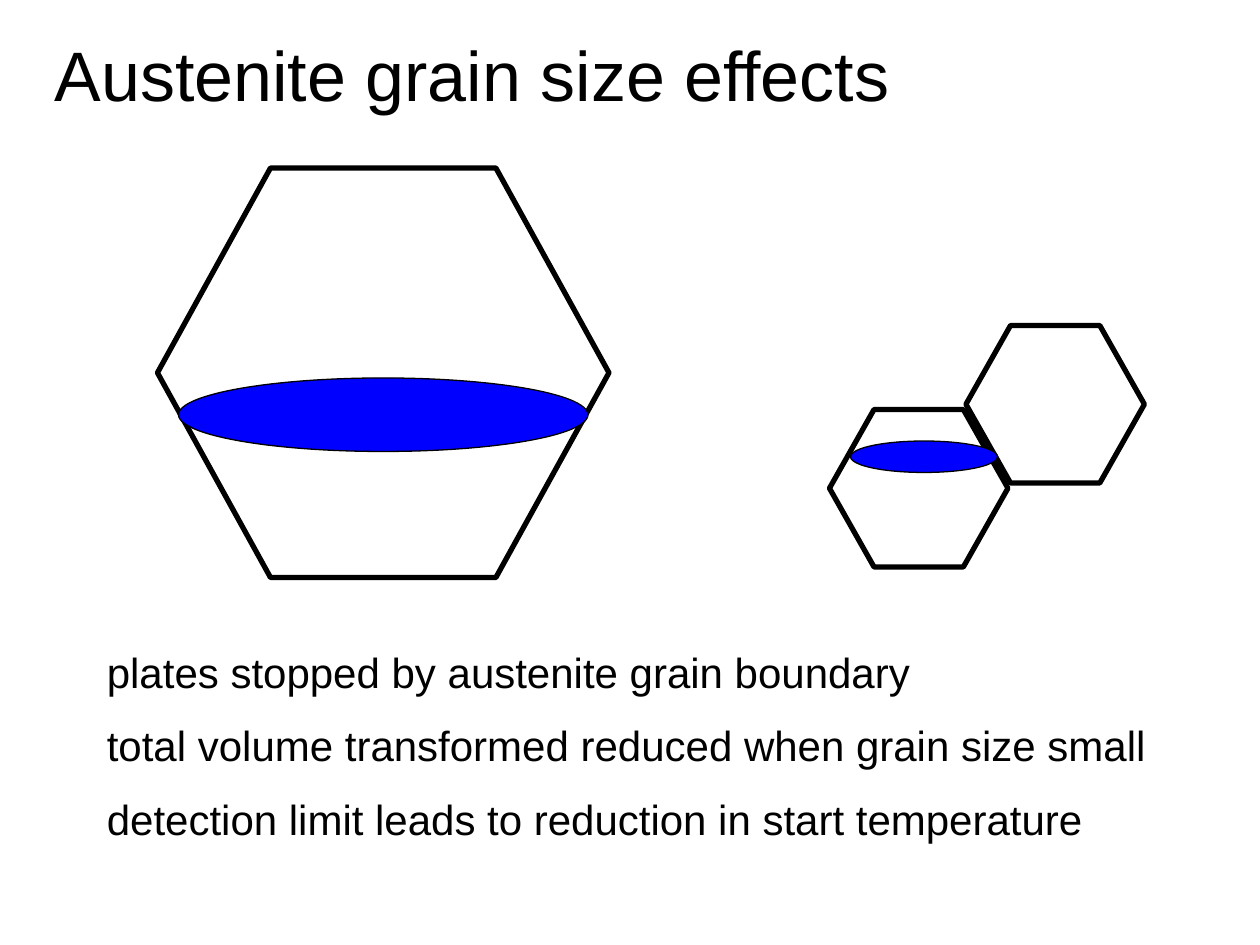
from pptx import Presentation
from pptx.dml.color import RGBColor
from pptx.enum.shapes import MSO_SHAPE as Shape
from pptx.enum.text import MSO_ANCHOR as Anchor, MSO_AUTO_SIZE as AutoSize, PP_ALIGN as Align
from pptx.util import Emu, Pt

BLACK = RGBColor(0x00, 0x00, 0x00)
BLUE = RGBColor(0x00, 0x00, 0xFF)
FONT = "Arial"
EMU_PER_PX = 7620  # 120 px to the inch

FINDINGS = [
    "plates stopped by austenite grain boundary",
    "total volume transformed reduced when grain size small",
    "detection limit leads to reduction in start temperature",
]


def px(length):
    return Emu(length * EMU_PER_PX)


def add_outlined(slide, preset, box, line_width):
    shape = slide.shapes.add_shape(preset, *map(px, box))
    shape.shadow.inherit = False
    shape.line.color.rgb = BLACK
    shape.line.width = Pt(line_width)
    return shape


def add_grain(slide, box, corner):
    grain = add_outlined(slide, Shape.HEXAGON, box, 3)
    grain.adjustments[0] = corner
    grain.fill.background()


def add_plate(slide, grain_box, inset, drop, width, height):
    """Place a martensite plate relative to the grain that stops it."""
    left, top = grain_box[:2]
    box = (left + inset, top + drop, width, height)
    plate = add_outlined(slide, Shape.OVAL, box, 0.75)
    plate.fill.solid()
    plate.fill.fore_color.rgb = BLUE


def add_text(paragraph, text, size):
    run = paragraph.add_run()
    run.text = text
    run.font.name = FONT
    run.font.size = Pt(size)
    run.font.color.rgb = BLACK
    paragraph.alignment = Align.LEFT


def set_title(slide, box, text):
    title = slide.shapes.title
    title.left, title.top, title.width, title.height = map(px, box)
    frame = title.text_frame
    frame.word_wrap = False
    frame.auto_size = AutoSize.SHAPE_TO_FIT_TEXT
    frame.vertical_anchor = Anchor.TOP
    add_text(frame.paragraphs[0], text, 40)


def add_findings(slide, box):
    frame = slide.shapes.add_textbox(*map(px, box)).text_frame
    frame.word_wrap = True
    frame.auto_size = AutoSize.SHAPE_TO_FIT_TEXT
    for index, finding in enumerate(FINDINGS):
        paragraph = frame.add_paragraph() if index else frame.paragraphs[0]
        paragraph.space_before = Pt(13 if index else 0)
        add_text(paragraph, finding, 24)


def main():
    deck = Presentation()
    deck.slide_width, deck.slide_height = px(1200), px(900)
    slide = deck.slides.add_slide(deck.slide_layouts[5])

    coarse_grain = (150, 160, 430, 390)
    neighbour_grain = (920, 310, 170, 150)
    fine_grain = (790, 390, 170, 150)
    add_grain(slide, coarse_grain, 0.276)
    for grain_box in (neighbour_grain, fine_grain):
        add_grain(slide, grain_box, 0.283)
    add_plate(slide, coarse_grain, 20, 200, 390, 70)
    add_plate(slide, fine_grain, 20, 30, 140, 30)

    add_findings(slide, (90, 610, 1030, 204))
    set_title(slide, (40, 24, 821, 92), "Austenite grain size effects")
    deck.save("out.pptx")


if __name__ == "__main__":
    main()
